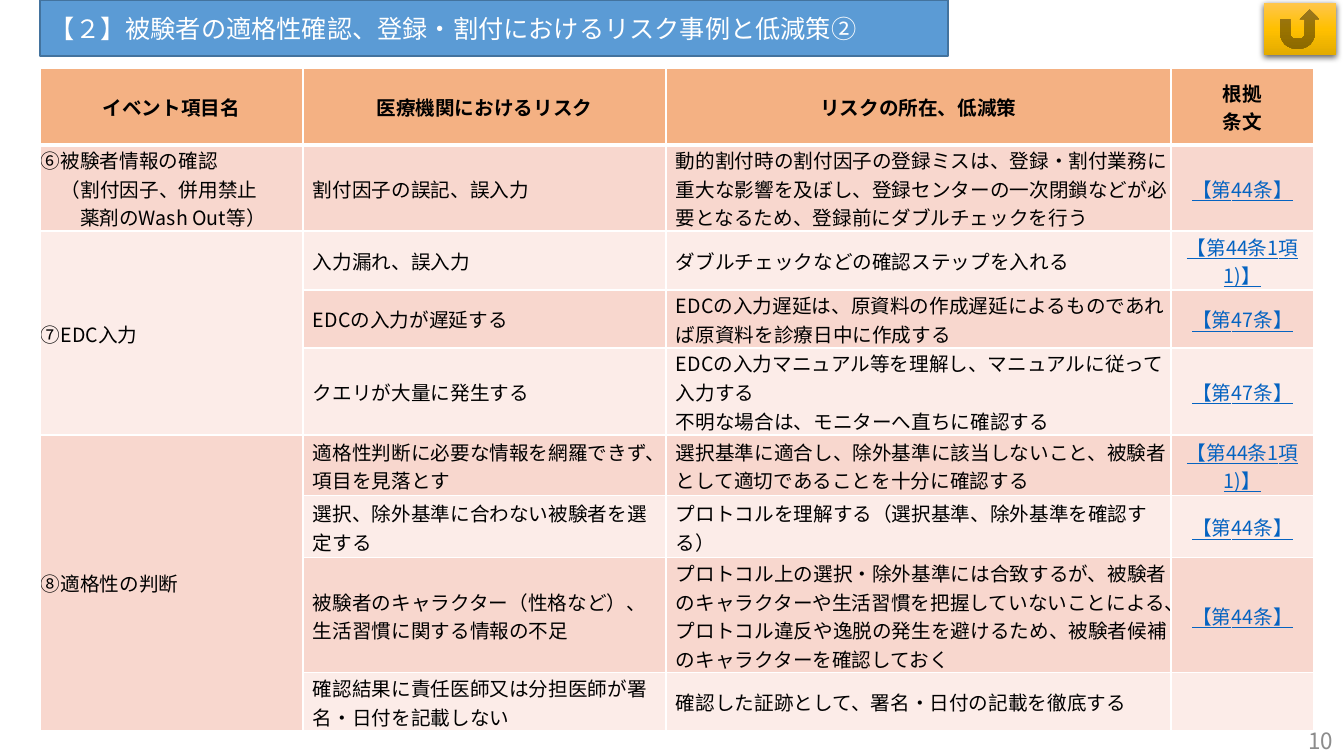
import lxml.etree
import pptx
import pptx.dml.color
import pptx.enum.shapes
import pptx.enum.text
import pptx.oxml.ns
import pptx.util

ALIGN = pptx.enum.text.PP_ALIGN
SHAPE = pptx.enum.shapes.MSO_SHAPE
COLORS = {
    "black": "000000",
    "white": "FFFFFF",
    "header": "F4B183",
    "dark_band": "F8D7CE",
    "light_band": "FCECE8",
    "link": "0563C1",
    "title": "5B9BD5",
    "title_line": "43739E",
    "number": "8C8C8C",
}
GOLD = [(0, "FFC64B"), (50, "FFC000"), (100, "E3AB00")]
COLUMNS = [263, 363, 505, 143]
ROWS = [77, 86, 59, 58, 87, 61, 62, 115, 58]
HEADER = [["イベント項目名"], ["医療機関におけるリスク"], ["リスクの所在、低減策"], ["根拠", "条文"]]
EVENTS = [
    (1, 1, ["⑥被験者情報の確認", "（割付因子、併用禁止", "薬剤のWash Out等）"]),
    (2, 3, ["⑦EDC入力"]),
    (5, 4, ["⑧適格性の判断"]),
]
RISKS = [
    (["割付因子の誤記、誤入力"],
     ["動的割付時の割付因子の登録ミスは、登録・割付業務に重大な影響を及ぼし、登録センターの一次閉鎖などが必要となるため、登録前にダブルチェックを行う"],
     ["【第44条】"]),
    (["入力漏れ、誤入力"], ["ダブルチェックなどの確認ステップを入れる"], ["【第44条1項1)】"]),
    (["EDCの入力が遅延する"],
     ["EDCの入力遅延は、原資料の作成遅延によるものであれば原資料を診療日中に作成する"],
     ["【第47条】"]),
    (["クエリが大量に発生する"],
     ["EDCの入力マニュアル等を理解し、マニュアルに従って入力する", "不明な場合は、モニターへ直ちに確認する"],
     ["【第47条】"]),
    (["適格性判断に必要な情報を網羅できず、項目を見落とす"],
     ["選択基準に適合し、除外基準に該当しないこと、被験者として適切であることを十分に確認する"],
     ["【第44条1項1)】"]),
    (["選択、除外基準に合わない被験者を選定する"],
     ["プロトコルを理解する（選択基準、除外基準を確認する）"],
     ["【第44条】"]),
    (["被験者のキャラクター（性格など）、生活習慣に関する情報の不足"],
     ["プロトコル上の選択・除外基準には合致するが、被験者のキャラクターや生活習慣を把握していないことによる、プロトコル違反や逸脱の発生を避けるため、被験者候補のキャラクターを確認しておく"],
     ["【第44条】"]),
    (["確認結果に責任医師又は分担医師が署名・日付を記載しない"],
     ["確認した証跡として、署名・日付の記載を徹底する"],
     []),
]


def px(length):
    return pptx.util.Emu(round(length * 914400 / 100.8))


def rgb(name):
    return pptx.dml.color.RGBColor.from_string(COLORS[name])


def add_xml(parent, tag, **values):
    return lxml.etree.SubElement(parent, pptx.oxml.ns.qn(tag), values)


class SlideBuilder:
    """Holds the font and current slide and draws each kind of element."""

    def __init__(self, page, font="Noto Sans CJK JP"):
        self.page = page
        self.font = font

    def add_text(self, frame, lines, size, color, align=ALIGN.LEFT, bold=False,
                 underline=False, indents=(0,)):
        frame.word_wrap = True
        for index, line in enumerate(lines):
            para = frame.paragraphs[0] if index == 0 else frame.add_paragraph()
            para.alignment = align
            indent = indents[min(index, len(indents) - 1)]
            if indent:
                para._p.get_or_add_pPr().set("marL", str(px(indent)))
            span = para.add_run()
            span.text = line
            span.font.name = self.font
            span.font.size = pptx.util.Pt(size)
            span.font.bold = bold
            span.font.underline = underline
            span.font.color.rgb = rgb(color)
            add_xml(span.font._element, "a:ea", typeface=self.font)

    def shape(self, kind, left, top, width, height):
        box = self.page.shapes.add_shape(kind, px(left), px(top), px(width), px(height))
        box.shadow.inherit = False
        return box

    def title(self, text, *place):
        box = self.shape(SHAPE.RECTANGLE, *place)
        box.fill.solid()
        box.fill.fore_color.rgb = rgb("title")
        box.line.color.rgb = rgb("title_line")
        box.line.width = pptx.util.Pt(1)
        box.text_frame.vertical_anchor = pptx.enum.text.MSO_ANCHOR.MIDDLE
        self.add_text(box.text_frame, [text], 18, "white")

    def return_button(self, *place):
        box = self.shape(SHAPE.ACTION_BUTTON_RETURN, *place)
        box.line.fill.background()
        box.fill.gradient()
        box.fill.gradient_angle = 270
        properties = box._element.spPr
        stops = properties.find(".//" + pptx.oxml.ns.qn("a:gsLst"))
        for stop in list(stops):
            stops.remove(stop)
        for position, color in GOLD:
            stop = add_xml(stops, "a:gs", pos=str(position * 1000))
            add_xml(stop, "a:srgbClr", val=color)
        effects = properties.find(pptx.oxml.ns.qn("a:effectLst"))
        shadow = add_xml(effects, "a:outerShdw", blurRad=str(pptx.util.Pt(4.5)),
                         dist=str(pptx.util.Pt(1.5)), dir="5400000", rotWithShape="0")
        add_xml(add_xml(shadow, "a:srgbClr", val=COLORS["black"]), "a:alpha", val="63000")

    def page_number(self, text, *place):
        box = self.page.shapes.add_textbox(*map(px, place))
        box.text_frame.vertical_anchor = pptx.enum.text.MSO_ANCHOR.MIDDLE
        self.add_text(box.text_frame, [text], 16, "number", ALIGN.RIGHT)

    def table(self, left, top, columns, rows):
        frame = self.page.shapes.add_table(len(rows), len(columns), px(left), px(top),
                                           px(sum(columns)), px(sum(rows)))
        grid = frame.table
        grid.horz_banding = False
        for column, width in zip(grid.columns, columns):
            column.width = px(width)
        for index, (row, height) in enumerate(zip(grid.rows, rows)):
            row.height = px(height)
            band = "dark_band" if index % 2 else "light_band"
            for cell in row.cells:
                self.style_cell(cell, band if index else "header", 1 if index else 3)
        return grid

    def style_cell(self, cell, fill, bottom):
        cell.margin_left = cell.margin_top = cell.margin_right = px(1)
        cell.margin_bottom = 0
        cell.vertical_anchor = pptx.enum.text.MSO_ANCHOR.MIDDLE
        properties = cell._tc.get_or_add_tcPr()
        for side, width in zip("LRTB", (1, 1, 1, bottom)):
            line = add_xml(properties, "a:ln" + side, w=str(pptx.util.Pt(width)))
            add_xml(add_xml(line, "a:solidFill"), "a:srgbClr", val=COLORS["white"])
        cell.fill.solid()
        cell.fill.fore_color.rgb = rgb(fill)


def main():
    deck = pptx.Presentation()
    deck.slide_width = px(1344)
    deck.slide_height = px(756)
    builder = SlideBuilder(deck.slides.add_slide(deck.slide_layouts[6]))
    builder.page_number("10", 1041, 721, 302, 40)
    grid = builder.table(40, 68, COLUMNS, ROWS)
    for column, lines in enumerate(HEADER):
        builder.add_text(grid.cell(0, column).text_frame, lines, 14, "black", ALIGN.CENTER, bold=True)
    for row, span, lines in EVENTS:
        cell = grid.cell(row, 0)
        if span > 1:
            cell.merge(grid.cell(row + span - 1, 0))
        builder.add_text(cell.text_frame, lines, 14, "black", indents=(0, 20, 39))
    for row, (risk, measure, clause) in enumerate(RISKS, 1):
        for column, lines in enumerate((risk, measure), 1):
            builder.add_text(grid.cell(row, column).text_frame, lines, 14, "black", indents=(9,))
        builder.add_text(grid.cell(row, 3).text_frame, clause, 14, "link", ALIGN.CENTER, underline=True)
    builder.return_button(1264, 3, 72, 52)
    builder.title("【２】被験者の適格性確認、登録・割付におけるリスク事例と低減策②", 40, 0, 908, 56)
    deck.save("out.pptx")


if __name__ == "__main__":
    main()
